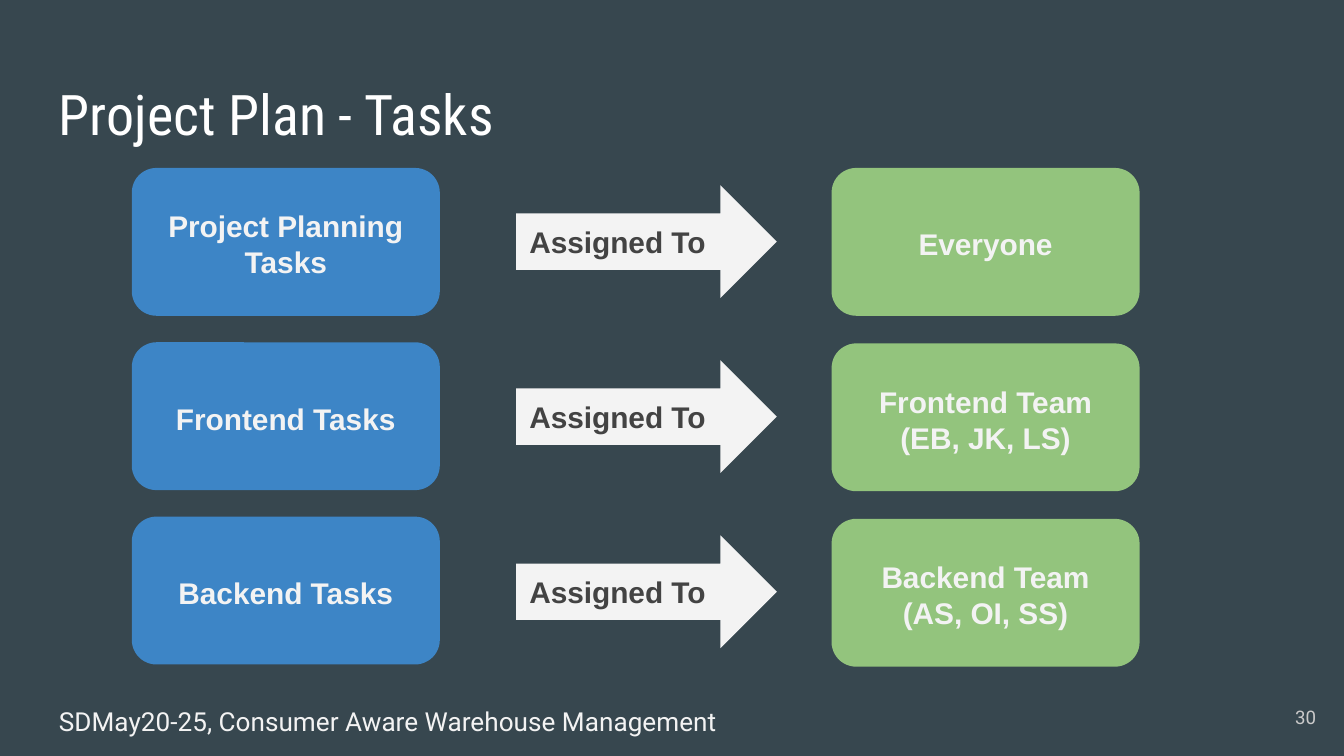
"""Builds the project plan slide that assigns each group of tasks to a team."""
from dataclasses import dataclass
from typing import NamedTuple

from pptx import Presentation
from pptx.dml.color import RGBColor
from pptx.enum.shapes import MSO_SHAPE
from pptx.enum.text import MSO_ANCHOR, PP_ALIGN
from pptx.shapes.autoshape import Shape
from pptx.slide import Slide
from pptx.util import Pt

ROUND_RECT, RIGHT_ARROW = MSO_SHAPE.ROUNDED_RECTANGLE, MSO_SHAPE.RIGHT_ARROW
TOP, MIDDLE = MSO_ANCHOR.TOP, MSO_ANCHOR.MIDDLE
LEFT, CENTER, RIGHT = PP_ALIGN.LEFT, PP_ALIGN.CENTER, PP_ALIGN.RIGHT


class TextStyle(NamedTuple):
    font: str
    size: float
    color: str
    bold: bool = False
    align: PP_ALIGN = LEFT
    anchor: MSO_ANCHOR = TOP
    top_inset: float = 7.2


class Box(NamedTuple):
    left: float
    top: float
    width: float
    height: float


@dataclass(frozen=True)
class Theme:
    background: str = "37474F"
    task_fill: str = "3D85C6"
    team_fill: str = "93C47D"
    arrow_fill: str = "F3F3F3"
    title: TextStyle = TextStyle("Roboto Condensed", 30, "FFFFFF")
    footer: TextStyle = TextStyle("Roboto", 14, "F3F3F3")
    number: TextStyle = TextStyle("Roboto", 10, "CACACA", align=RIGHT, anchor=MIDDLE)
    card: TextStyle = TextStyle("Arial", 16, "F3F3F3", True, CENTER, MIDDLE, 9.5)
    arrow: TextStyle = TextStyle("Arial", 16, "434343", True, LEFT, MIDDLE)


@dataclass(frozen=True)
class Column:
    preset: MSO_SHAPE
    first: Box
    pitch: float
    fill: str
    style: TextStyle
    labels: tuple[str, ...]


THEME = Theme()
INSET = 7.2
COLUMNS = (
    Column(ROUND_RECT, Box(70.6, 90, 165, 79.2), 93.4, THEME.task_fill, THEME.card,
           ("Project Planning Tasks", "Frontend Tasks", "Backend Tasks")),
    Column(RIGHT_ARROW, Box(276.5, 99.2, 139.7, 60.5), 93.8, THEME.arrow_fill, THEME.arrow,
           ("Assigned To",) * 3),
    Column(ROUND_RECT, Box(445.5, 90, 165, 79.2), 94, THEME.team_fill, THEME.card,
           ("Everyone", "Frontend Team\n(EB, JK, LS)", "Backend Team\n(AS, OI, SS)")),
)


def write(holder: Shape, text: str, style: TextStyle) -> None:
    frame = holder.text_frame
    frame.word_wrap = True
    frame.vertical_anchor = style.anchor
    frame.margin_left = frame.margin_right = frame.margin_bottom = Pt(INSET)
    frame.margin_top = Pt(style.top_inset)
    frame.text = text
    for paragraph in frame.paragraphs:
        paragraph.alignment = style.align
        for run in paragraph.runs:
            run.font.name = style.font
            run.font.size = Pt(style.size)
            run.font.bold = style.bold
            run.font.color.rgb = RGBColor.from_string(style.color)


def add_label(slide: Slide, box: Box, text: str, style: TextStyle) -> None:
    write(slide.shapes.add_textbox(*map(Pt, box)), text, style)


def add_column(slide: Slide, column: Column) -> None:
    for row, label in enumerate(column.labels):
        box = column.first._replace(top=column.first.top + row * column.pitch)
        step = slide.shapes.add_shape(column.preset, *map(Pt, box))
        step.shadow.inherit = False
        step.fill.solid()
        step.fill.fore_color.rgb = RGBColor.from_string(column.fill)
        step.line.fill.background()
        write(step, label, column.style)


def main() -> None:
    deck = Presentation()
    deck.slide_width, deck.slide_height = Pt(720), Pt(405)
    slide = deck.slides.add_slide(deck.slide_layouts[6])
    slide.background.fill.solid()
    slide.background.fill.fore_color.rgb = RGBColor.from_string(THEME.background)

    add_label(slide, Box(24.5, 35.3, 671, 45.4), "Project Plan - Tasks", THEME.title)
    add_label(slide, Box(24.5, 370.8, 671, 23.8),
              "SDMay20-25, Consumer Aware Warehouse Management", THEME.footer)
    for column in COLUMNS:
        add_column(slide, column)
    add_label(slide, Box(668.9, 368.6, 43.2, 31), "30", THEME.number)
    deck.save("out.pptx")


if __name__ == "__main__":
    main()
